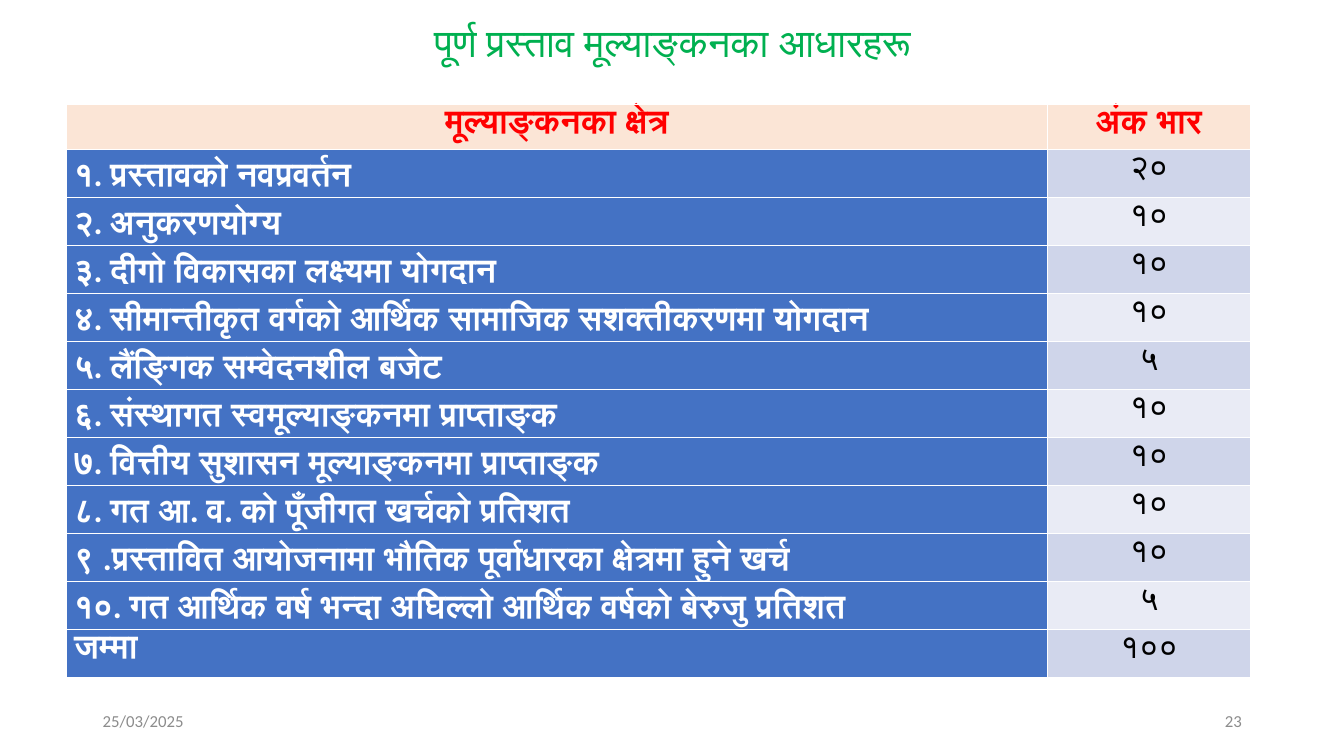
from pptx import Presentation
from pptx.dml.color import RGBColor as RGB
from pptx.enum.text import MSO_ANCHOR as Anchor, MSO_AUTO_SIZE as Fit, PP_ALIGN as Align
from pptx.util import Cm, Pt

INK = {
    "title": "00B050", "head": "FF0000", "label": "FFFFFF", "mark": "000000",
    "foot": "8C8C8C", "peach": "FBE5D6", "blue": "4472C4",
    "odd": "CFD5EA", "even": "E9EBF5",
}
HEAD = ("मूल्याङ्कनका क्षेत्र", "अंक भार")
ROWS = [
    ("१. प्रस्तावको नवप्रवर्तन", "२०"),
    ("२. अनुकरणयोग्य", "१०"),
    ("३. दीगो विकासका लक्ष्यमा योगदान", "१०"),
    ("४. सीमान्तीकृत वर्गको आर्थिक सामाजिक सशक्तीकरणमा योगदान", "१०"),
    ("५. लैंङ्गिक सम्वेदनशील बजेट", "५"),
    ("६. संस्थागत स्वमूल्याङ्कनमा प्राप्ताङ्क", "१०"),
    ("७. वित्तीय सुशासन मूल्याङ्कनमा प्राप्ताङ्क", "१०"),
    ("८. गत आ. व. को पूँजीगत खर्चको प्रतिशत", "१०"),
    ("९ .प्रस्तावित आयोजनामा भौतिक पूर्वाधारका क्षेत्रमा हुने खर्च", "१०"),
    ("१०. गत आर्थिक वर्ष भन्दा अघिल्लो आर्थिक वर्षको बेरुजु प्रतिशत", "५"),
    ("जम्मा", "१००"),
]
COLS = (24.71, 5.13)
TOP_ROW, ROW = 1.12, 1.21


def write(frame, text, ink, size, align, font="Calibri", bold=False, gap=1.0):
    frame.text = text
    para = frame.paragraphs[0]
    para.alignment = align
    para.line_spacing = gap
    for run in para.runs:
        run.font.name = font
        run.font.size = Pt(size)
        run.font.bold = bold
        run.font.color.rgb = RGB.from_string(INK[ink])


def add_title(slide, text):
    title = slide.shapes.title
    title.left, title.top = Cm(2.34), Cm(0.43)
    title.width, title.height = Cm(29.21), Cm(1.42)
    frame = title.text_frame
    frame.auto_size = Fit.NONE
    frame.vertical_anchor = Anchor.MIDDLE
    write(frame, text, "title", 28, Align.CENTER, font="Lato", gap=0.9)


def fill_cell(cell, text, fill, ink, align, bold, anchor=Anchor.TOP):
    cell.fill.solid()
    cell.fill.fore_color.rgb = RGB.from_string(INK[fill])
    cell.margin_left = cell.margin_right = Cm(0.19)
    cell.margin_top = cell.margin_bottom = 0
    cell.vertical_anchor = anchor
    write(cell.text_frame, text, ink, 24, align, bold=bold, gap=1.07)


def add_grid(slide):
    high = TOP_ROW + ROW * len(ROWS)
    grid = slide.shapes.add_table(len(ROWS) + 1, len(COLS), Cm(1.68), Cm(2.64),
                                  Cm(sum(COLS)), Cm(high)).table
    for col, wide in zip(grid.columns, COLS):
        col.width = Cm(wide)
    for num, row in enumerate(grid.rows):
        row.height = Cm(ROW if num else TOP_ROW)

    # Header row
    for col, text in enumerate(HEAD):
        fill_cell(grid.cell(0, col), text, "peach", "head", Align.CENTER, True)

    # Criteria and marks; the total in the last row sits at the top
    for num, (label, mark) in enumerate(ROWS, 1):
        anchor = Anchor.MIDDLE if num < len(ROWS) else Anchor.TOP
        fill_cell(grid.cell(num, 0), label, "blue", "label", Align.JUSTIFY, True, anchor)
        band = "odd" if num % 2 else "even"
        fill_cell(grid.cell(num, 1), mark, band, "mark", Align.CENTER, False)


def add_foot(slide, left, text, align):
    box = slide.shapes.add_textbox(Cm(left), Cm(17.65), Cm(7.62), Cm(1.02))
    frame = box.text_frame
    frame.word_wrap = True
    frame.vertical_anchor = Anchor.MIDDLE
    write(frame, text, "foot", 12, align)


def main():
    deck = Presentation()
    deck.slide_width, deck.slide_height = Cm(33.87), Cm(19.05)
    slide = deck.slides.add_slide(deck.slide_layouts[5])

    add_title(slide, "पूर्ण प्रस्ताव मूल्याङ्कनका आधारहरू")
    add_grid(slide)

    # Date and page number
    add_foot(slide, 2.34, "25/03/2025", Align.LEFT)
    add_foot(slide, 23.93, "23", Align.RIGHT)
    deck.save("out.pptx")


if __name__ == "__main__":
    main()
